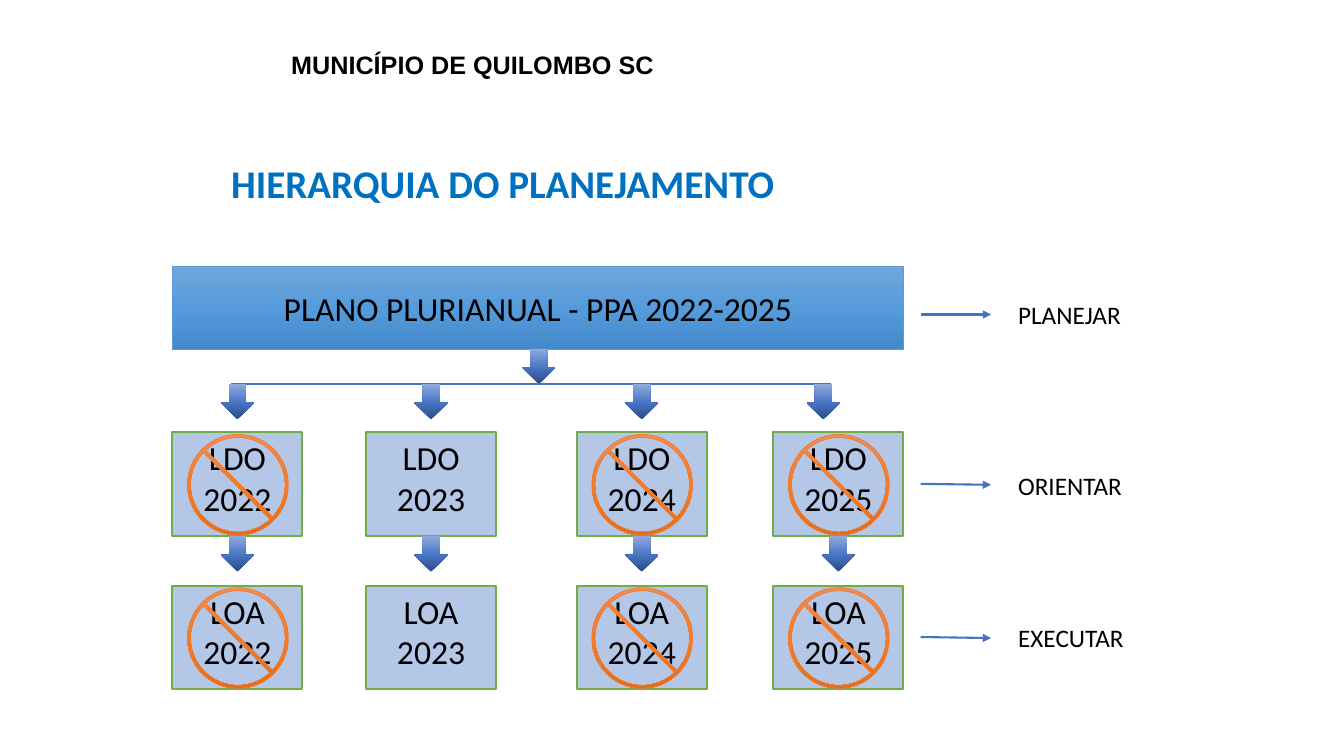
from copy import deepcopy

from lxml.etree import SubElement
from pptx import Presentation
from pptx.dml.color import RGBColor
from pptx.enum.shapes import MSO_CONNECTOR, MSO_SHAPE
from pptx.enum.text import MSO_ANCHOR, MSO_AUTO_SIZE, PP_ALIGN
from pptx.oxml.ns import qn
from pptx.util import Inches, Pt

COLORS = {
    "text": "000000",
    "title": "0070C0",
    "plan_line": "5B9BD5",
    "box": "B4C7E7",
    "box_line": "70AD47",
    "connector": "4472C4",
    "ban_line": "ED7D31",
}
# Three gradient colours from start to end, middle position, clockwise angle
GRADIENTS = {
    "plan": (("71A6DB", "559BDB", "448ACA"), 0.5, 90),
    "arrow": (("2A4B86", "4A76C6", "8FAADC"), 0.48, 270),
    "ban": (("F18C57", "F67B28", "E56C19"), 0.5, 90),
}


def rgb(name):
    return RGBColor.from_string(COLORS[name])


class PlanningSlide:
    """Holds the text style and the current slide."""

    def __init__(self, presentation):
        self.slide = presentation.slides.add_slide(presentation.slide_layouts[5])
        self.font = {"name": "Calibri", "size": Pt(24), "bold": False}

    def set_text(self, shape, lines, align=PP_ALIGN.CENTER, color="text", frame=None, **font):
        text_frame = shape.text_frame
        frame_format = {"word_wrap": True, "vertical_anchor": MSO_ANCHOR.TOP, **(frame or {})}
        for key, value in frame_format.items():
            setattr(text_frame, key, value)
        text_frame.text = "\n".join(lines)
        for paragraph in text_frame.paragraphs:
            paragraph.alignment = align
            for key, value in {**self.font, **font}.items():
                setattr(paragraph.font, key, value)
            paragraph.font.color.rgb = rgb(color)

    def title(self, text, left, top, width, height):
        shape = self.slide.shapes.title
        place = {"left": left, "top": top, "width": width, "height": height}
        for key, value in place.items():
            setattr(shape, key, Inches(value))
        self.set_text(shape, [text], color="title", size=Pt(28), bold=True,
                      frame={"vertical_anchor": MSO_ANCHOR.MIDDLE})

    def label(self, text, left, top, width, height, wrap=True, **font):
        box = self.slide.shapes.add_textbox(*map(Inches, (left, top, width, height)))
        frame = {"word_wrap": wrap, "auto_size": MSO_AUTO_SIZE.SHAPE_TO_FIT_TEXT}
        self.set_text(box, [text], PP_ALIGN.LEFT, frame=frame, size=Pt(18), **font)

    def shape(self, kind, left, top, width, height, fill, line=None, line_width=0.5):
        shape = self.slide.shapes.add_shape(kind, *map(Inches, (left, top, width, height)))
        shape.shadow.inherit = False
        if fill in GRADIENTS:
            self.gradient(shape, *GRADIENTS[fill])
        else:
            shape.fill.solid()
            shape.fill.fore_color.rgb = rgb(fill)
        if line:
            shape.line.color.rgb = rgb(line)
            shape.line.width = Pt(line_width)
        else:
            shape.line.fill.background()
        return shape

    def gradient(self, shape, colors, middle, angle):
        shape.fill.gradient()
        shape.fill.gradient_angle = 360 - angle
        stops = next(shape.element.iter(qn("a:gsLst")))
        stops.insert(1, deepcopy(stops[0]))
        for stop, color, position in zip(shape.fill.gradient_stops, colors, (0, middle, 1)):
            stop.color.rgb = RGBColor.from_string(color)
            stop.position = position

    def down_arrow(self, left, top):
        self.shape(MSO_SHAPE.DOWN_ARROW, left, top, 0.33, 0.35, "arrow")

    def ban(self, left, top):
        sign = self.shape(MSO_SHAPE.NO_SYMBOL, left, top, 1, 1, "ban", "ban_line")
        sign.adjustments[0] = 0.031

    def line(self, x1, y1, x2, y2, arrow=False):
        connector = self.slide.shapes.add_connector(
            MSO_CONNECTOR.STRAIGHT, *map(Inches, (x1, y1, x2, y2)))
        connector.line.color.rgb = rgb("connector")
        connector.line.width = Pt(1.5)
        properties = connector.element.spPr
        if arrow:
            SubElement(properties.find(qn("a:ln")), qn("a:tailEnd"), type="triangle")
        SubElement(properties, qn("a:effectLst"))


def main():
    presentation = Presentation()
    presentation.slide_width, presentation.slide_height = Inches(13.33), Inches(7.5)
    page = PlanningSlide(presentation)

    # Headings
    page.title("HIERARQUIA DO PLANEJAMENTO", 1.65, 1.46, 6.67, 0.71)
    page.label("MUNICÍPIO DE QUILOMBO SC", 2.79, 0.44, 3.83, 0.4,
               wrap=False, name="Arial", bold=True)

    # Multi-year plan
    plan = page.shape(MSO_SHAPE.RECTANGLE, 1.71, 2.64, 7.25, 0.83, "plan", "plan_line")
    page.set_text(plan, ["PLANO PLURIANUAL - PPA 2022-2025"],
                  frame={"margin_top": Inches(0.22)})

    # Yearly boxes, with a sign over each year but the current one
    columns = {2022: 1.71, 2023: 3.63, 2024: 5.72, 2025: 7.67}
    rows = {"LDO": 4.29, "LOA": 5.81}
    current_year = 2023
    for law, top in rows.items():
        for year, left in columns.items():
            box = page.shape(MSO_SHAPE.RECTANGLE, left, top, 1.29, 1.03, "box", "box_line", 1.5)
            page.set_text(box, [law, str(year)])
            if year != current_year:
                page.ban(left + 0.15, top + 0.02)

    # Branch line and down arrows
    page.down_arrow(5.18, 3.46)
    page.line(2.29, 3.81, 8.24, 3.81)
    for year, left in columns.items():
        branch_left = 8 if year == 2025 else left + 0.48
        page.down_arrow(branch_left, 3.81)
        page.down_arrow(left + 0.48, 5.32)

    # Role of each level
    roles = [("PLANEJAR", 2.92, 3.12, 3.12),
             ("ORIENTAR", 4.62, 4.8, 4.81),
             ("EXECUTAR", 6.12, 6.32, 6.33)]
    for role, label_top, start, end in roles:
        page.line(9.13, start, 9.83, end, arrow=True)
        page.label(role, 10, label_top, 1.37, 0.4)

    presentation.save("out.pptx")


if __name__ == "__main__":
    main()
